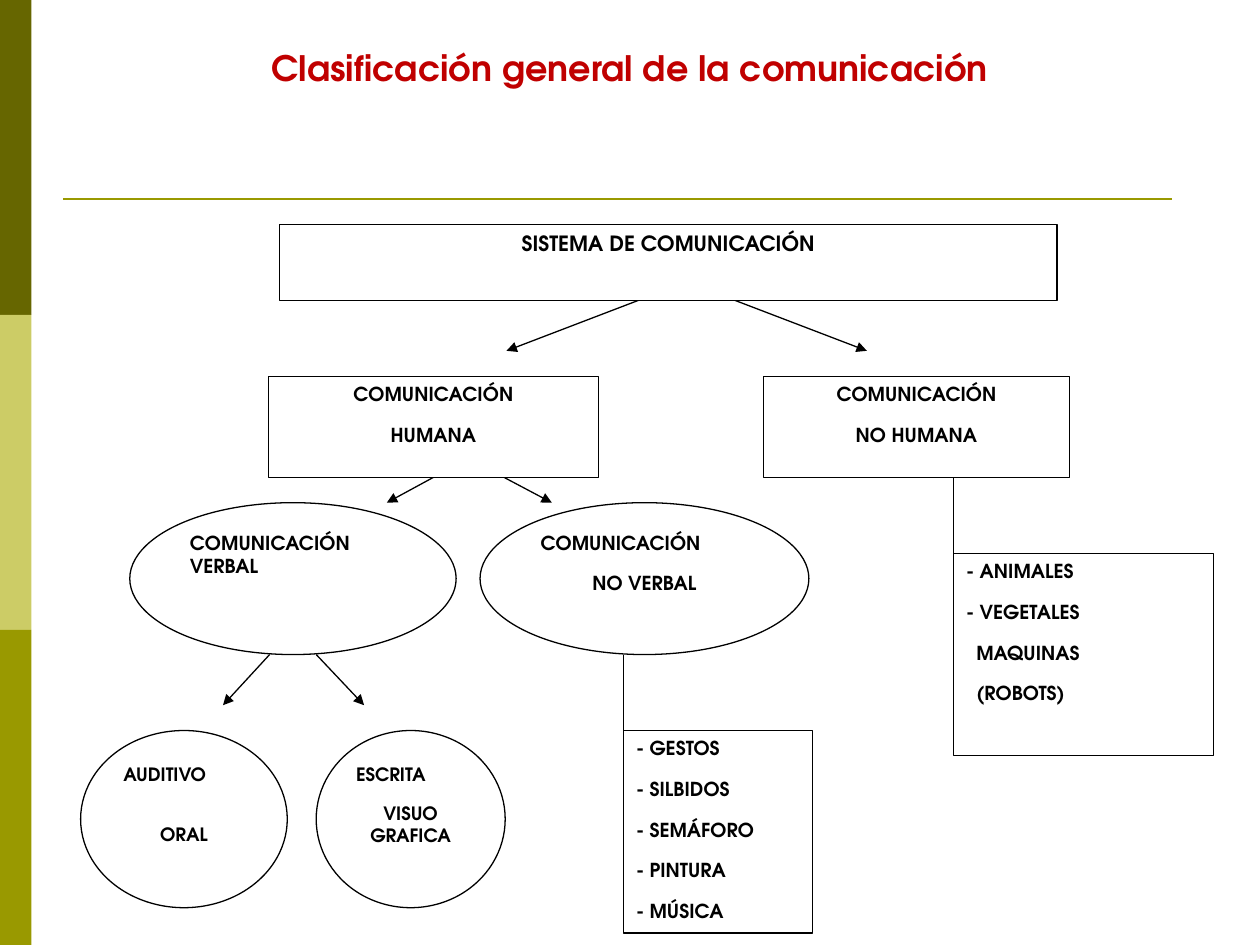
import pptx
import pptx.util
from lxml import etree
from pptx.dml.color import RGBColor
from pptx.enum.shapes import MSO_CONNECTOR, MSO_SHAPE
from pptx.enum.text import MSO_ANCHOR, PP_ALIGN
from pptx.oxml.ns import qn

FONT = "TeX Gyre Adventor"
BLACK = RGBColor(0, 0, 0)
WHITE = RGBColor(255, 255, 255)
RED = RGBColor(0xC0, 0, 0)
DARK_OLIVE = RGBColor(0x66, 0x66, 0)
PALE_OLIVE = RGBColor(0xCC, 0xCC, 0x66)
OLIVE = RGBColor(0x99, 0x99, 0)

LEFT, CENTER, JUSTIFY = PP_ALIGN.LEFT, PP_ALIGN.CENTER, PP_ALIGN.JUSTIFY
RECT, OVAL = MSO_SHAPE.RECTANGLE, MSO_SHAPE.OVAL

# Diagram grid
COLUMNS, ROWS = 90, 28

# Outline, column, row, columns wide, rows high, text size,
# paragraphs as (text, alignment, space after in points, left margin in inches)
NODES = [
    (RECT, 15.8, 0, 61.7, 3, 12, [("SISTEMA DE COMUNICACIÓN", CENTER, 10, 0)]),
    (RECT, 14.9, 6, 26.2, 4, 11, [("COMUNICACIÓN", CENTER, 10, 0),
                                  ("HUMANA", CENTER, 10, 0)]),
    (RECT, 54.2, 6, 24.3, 4, 11, [("COMUNICACIÓN", CENTER, 10, 0),
                                  ("NO HUMANA", CENTER, 10, 0)]),
    (OVAL, 3.9, 11, 25.9, 6, 11, [("COMUNICACIÓN VERBAL", JUSTIFY, 0, 0)]),
    (OVAL, 31.7, 11, 26.1, 6, 11, [("COMUNICACIÓN", LEFT, 10, 0),
                                   ("NO VERBAL", CENTER, 10, 0)]),
    (OVAL, 0, 20, 16.4, 7, 10.5, [("AUDITIVO", JUSTIFY, 22, 0),
                                  ("ORAL", CENTER, 10, 0)]),
    (OVAL, 18.7, 20, 15, 7, 10.5, [("ESCRITA", LEFT, 10, 0),
                                   ("VISUO GRAFICA", CENTER, 10, 0)]),
    (RECT, 43.1, 20, 15, 8, 11,
     [(f"- {sign}", LEFT, 10, 0)
      for sign in ("GESTOS", "SILBIDOS", "SEMÁFORO", "PINTURA", "MÚSICA")]),
    (RECT, 69.3, 13, 20.6, 8, 11, [("- ANIMALES", LEFT, 10, 0),
                                   ("- VEGETALES", LEFT, 10, 0),
                                   ("MAQUINAS", LEFT, 10, 0.08),
                                   ("(ROBOTS)", LEFT, 10, 0.08)]),
]

# From column, from row, to column, to row, arrowhead
LINKS = [
    (44.3, 3, 33.8, 5, True),
    (51.9, 3, 62.4, 5, True),
    (28, 10, 24.3, 11, True),
    (33.6, 10, 37.4, 11, True),
    (15, 17, 11.3, 19, True),
    (18.7, 17, 22.5, 19, True),
    (43.1, 17, 43.1, 26, False),
    (69.3, 10, 69.3, 20, False),
]


def style_paragraph(paragraph, size, color, align):
    paragraph.alignment = align
    for run in paragraph.runs:
        run.font.name = FONT
        run.font.size = pptx.util.Pt(size)
        run.font.bold = True
        run.font.color.rgb = color


def add_line(slide, start, end, color, width, arrow=False):
    line = slide.shapes.add_connector(
        MSO_CONNECTOR.STRAIGHT, *(int(v) for v in (*start, *end)))
    line.line.color.rgb = color
    line.line.width = pptx.util.Pt(width)
    if arrow:
        etree.SubElement(line.line._get_or_add_ln(), qn("a:tailEnd"), type="triangle")
    etree.SubElement(line._element.spPr, qn("a:effectLst"))


def add_block(slide, outline, box, fill):
    block = slide.shapes.add_shape(outline, *(int(v) for v in box))
    block.shadow.inherit = False
    block.fill.solid()
    block.fill.fore_color.rgb = fill
    block.line.fill.background()
    return block


def add_side_band(slide, left, top, width, height):
    shades = (DARK_OLIVE, PALE_OLIVE, OLIVE)
    part = height / len(shades)
    for index, shade in enumerate(shades):
        add_block(slide, RECT, (left, top + index * part, width, part), shade)


def add_title(slide, left, top, width, height):
    title = slide.shapes.add_textbox(*(int(v) for v in (left, top, width, height)))
    frame = title.text_frame
    frame.word_wrap = True
    frame.vertical_anchor = MSO_ANCHOR.TOP
    frame.margin_top = pptx.util.Inches(0.08)
    frame.text = "Clasificación general de la comunicación"
    style_paragraph(frame.paragraphs[0], 20, RED, CENTER)


def add_diagram(slide, left, top, width, height):
    column, row = width / COLUMNS, height / ROWS

    def point(x, y):
        return left + x * column, top + y * row

    # Links lie under the nodes
    for x1, y1, x2, y2, arrow in LINKS:
        add_line(slide, point(x1, y1), point(x2, y2), BLACK, 0.75, arrow)

    for outline, x, y, wide, high, size, entries in NODES:
        node = add_block(slide, outline, (*point(x, y), wide * column, high * row), WHITE)
        node.line.color.rgb = BLACK
        node.line.width = pptx.util.Pt(0.75)
        frame = node.text_frame
        frame.word_wrap = True
        frame.vertical_anchor = MSO_ANCHOR.TOP
        frame.text = "\n".join(entry[0] for entry in entries)
        for paragraph, (_, align, after, margin) in zip(frame.paragraphs, entries):
            style_paragraph(paragraph, size, BLACK, align)
            paragraph.space_after = pptx.util.Pt(after)
            if margin:
                paragraph._p.get_or_add_pPr().set("marL", str(pptx.util.Inches(margin)))


def main():
    deck = pptx.Presentation()
    deck.slide_width = pptx.util.Inches(10)
    deck.slide_height = pptx.util.Inches(7.5)
    wide, high = deck.slide_width, deck.slide_height
    slide = deck.slides.add_slide(deck.slide_layouts[6])

    add_side_band(slide, 0, 0, wide / 40, high)
    # Rule under the title
    rule = pptx.util.Inches(1.58)
    add_line(slide, (wide * 0.05, rule), (wide * 0.93, rule), OLIVE, 1.5)
    add_diagram(slide, pptx.util.Inches(0.64), pptx.util.Inches(1.78),
                wide * 0.9, high * 0.75)
    add_title(slide, pptx.util.Inches(0.78), pptx.util.Inches(0.29),
              pptx.util.Inches(8.44), pptx.util.Inches(0.8))
    deck.save("out.pptx")


if __name__ == "__main__":
    main()
